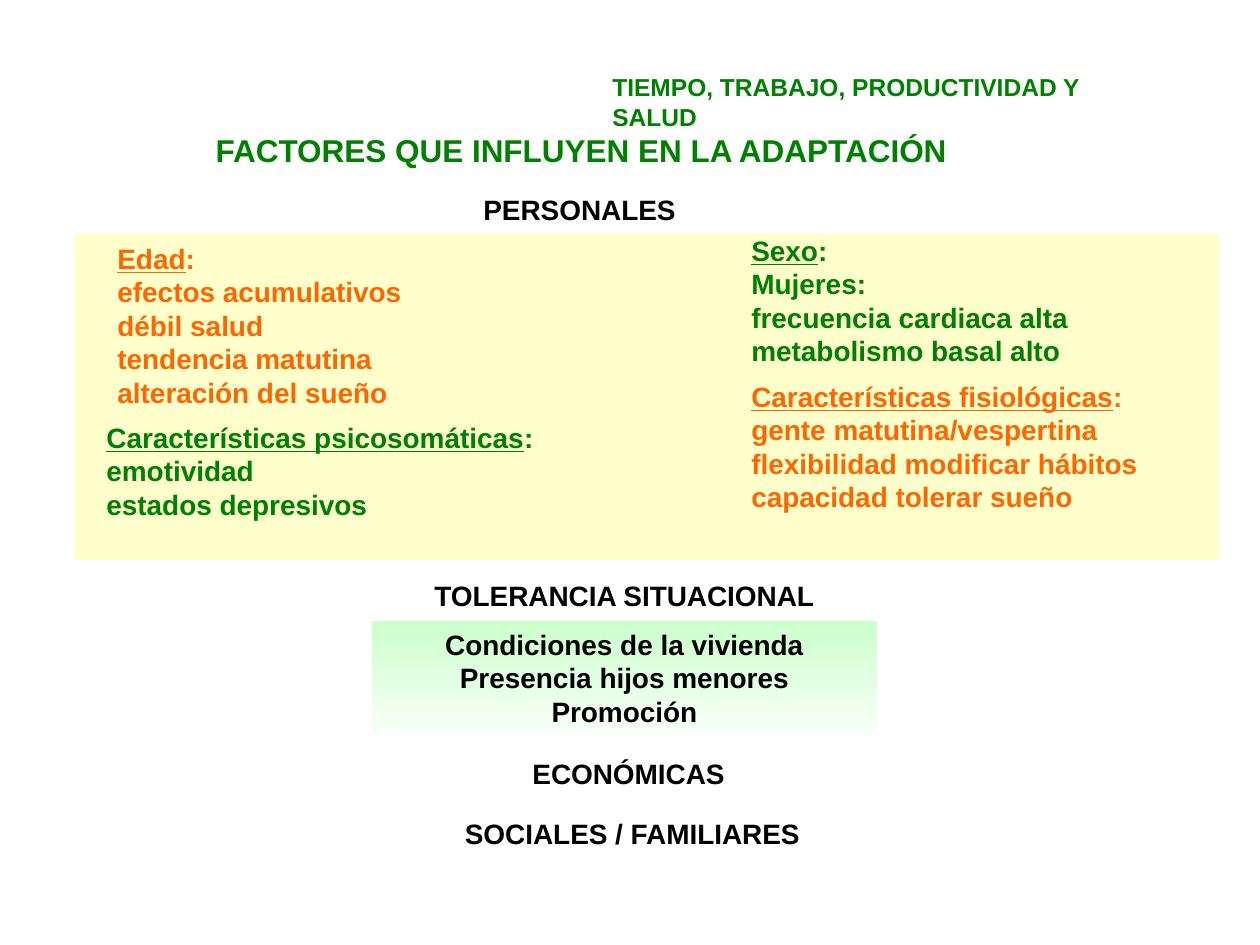
from pptx import Presentation
from pptx import util as u
from pptx.dml.color import RGBColor
from pptx.enum import shapes, text

PX = 914400 / 126
COLORS = {
    "green": "008000", "orange": "FF6600", "black": "000000", "white": "FFFFFF",
    "cream": "FFFFCC", "mint": "CCFFCC", "pale": "F8FFF8",
}


def rgb(name):
    return RGBColor.from_string(COLORS[name])


def box(*px):
    return [u.Emu(round(v * PX)) for v in px]


def write(sp, lines, color="black", size=16, center=False, wrap=True, heading=False):
    """Fill a shape with bold lines; a heading is underlined up to its colon."""
    tf = sp.text_frame
    tf.word_wrap = wrap
    tf.auto_size = text.MSO_AUTO_SIZE.NONE
    tf.vertical_anchor = text.MSO_ANCHOR.TOP
    for i, line in enumerate(lines):
        p = tf.paragraphs[0] if i == 0 else tf.add_paragraph()
        p.alignment = text.PP_ALIGN.CENTER if center else text.PP_ALIGN.LEFT
        p.space_before = u.Pt(0)
        underlined = heading and i == 0
        for part in ([line, ":"] if underlined else [line]):
            r = p.add_run()
            r.text = part
            r.font.name = "Arial"
            r.font.size = u.Pt(size)
            r.font.bold = True
            r.font.underline = underlined and part == line
            r.font.color.rgb = rgb(color)


def add_text(s, at, lines, **fmt):
    write(s.shapes.add_textbox(*box(*at)), lines, **fmt)


def add_rect(s, at, fill, lines=(), **fmt):
    sp = s.shapes.add_shape(shapes.MSO_SHAPE.RECTANGLE, *box(*at))
    sp.shadow.inherit = False
    sp.line.fill.background()
    if isinstance(fill, tuple):
        sp.fill.gradient()
        sp.fill.gradient_angle = 270
        for stop, position, name in zip(sp.fill.gradient_stops, (0, 1), fill):
            stop.position = position
            stop.color.rgb = rgb(name)
    else:
        sp.fill.solid()
        sp.fill.fore_color.rgb = rgb(fill)
    if lines:
        write(sp, lines, **fmt)


def add_title(s, at, title, **fmt):
    sp = s.shapes.title
    sp.left, sp.top, sp.width, sp.height = box(*at)
    write(sp, [title], **fmt)


def main():
    prs = Presentation()
    prs.slide_width, prs.slide_height = box(1260, 945)
    s = prs.slides.add_slide(prs.slide_layouts[5])

    # Running header and title
    add_text(s, (600, 66, 570, 66), ["TIEMPO, TRABAJO, PRODUCTIVIDAD Y SALUD"],
             color="green", size=14)
    add_title(s, (203, 125, 764, 50), "FACTORES QUE INFLUYEN EN LA ADAPTACIÓN",
              color="green", size=18)

    # Personal factors
    add_rect(s, (74, 234, 1145, 326), "cream")
    add_rect(s, (471, 186, 242, 46), "white", ["PERSONALES"])
    factors = [
        ((105, 235, 336, 181), "orange",
         ["Edad", "efectos acumulativos", "débil salud", "tendencia matutina",
          "alteración del sueño"]),
        ((94, 414, 462, 114), "green",
         ["Características psicosomáticas", "emotividad", "estados depresivos"]),
        ((739, 373, 441, 147), "orange",
         ["Características fisiológicas", "gente matutina/vespertina",
          "flexibilidad modificar hábitos", "capacidad tolerar sueño"]),
        ((739, 227, 431, 147), "green",
         ["Sexo", "Mujeres:", "frecuencia cardiaca alta", "metabolismo basal alto"]),
    ]
    for at, color, lines in factors:
        add_text(s, at, lines, color=color, heading=True)

    # Situational tolerance
    add_rect(s, (422, 572, 462, 46), "white", ["TOLERANCIA SITUACIONAL"])
    add_rect(s, (372, 621, 505, 114), ("mint", "pale"),
             ["Condiciones de la vivienda", "Presencia hijos menores", "Promoción"],
             center=True)

    # Remaining factors
    add_rect(s, (520, 750, 218, 46), "white", ["ECONÓMICAS"], wrap=False)
    add_rect(s, (412, 810, 441, 46), "white", ["SOCIALES / FAMILIARES"], center=True)

    prs.save("out.pptx")


if __name__ == "__main__":
    main()
